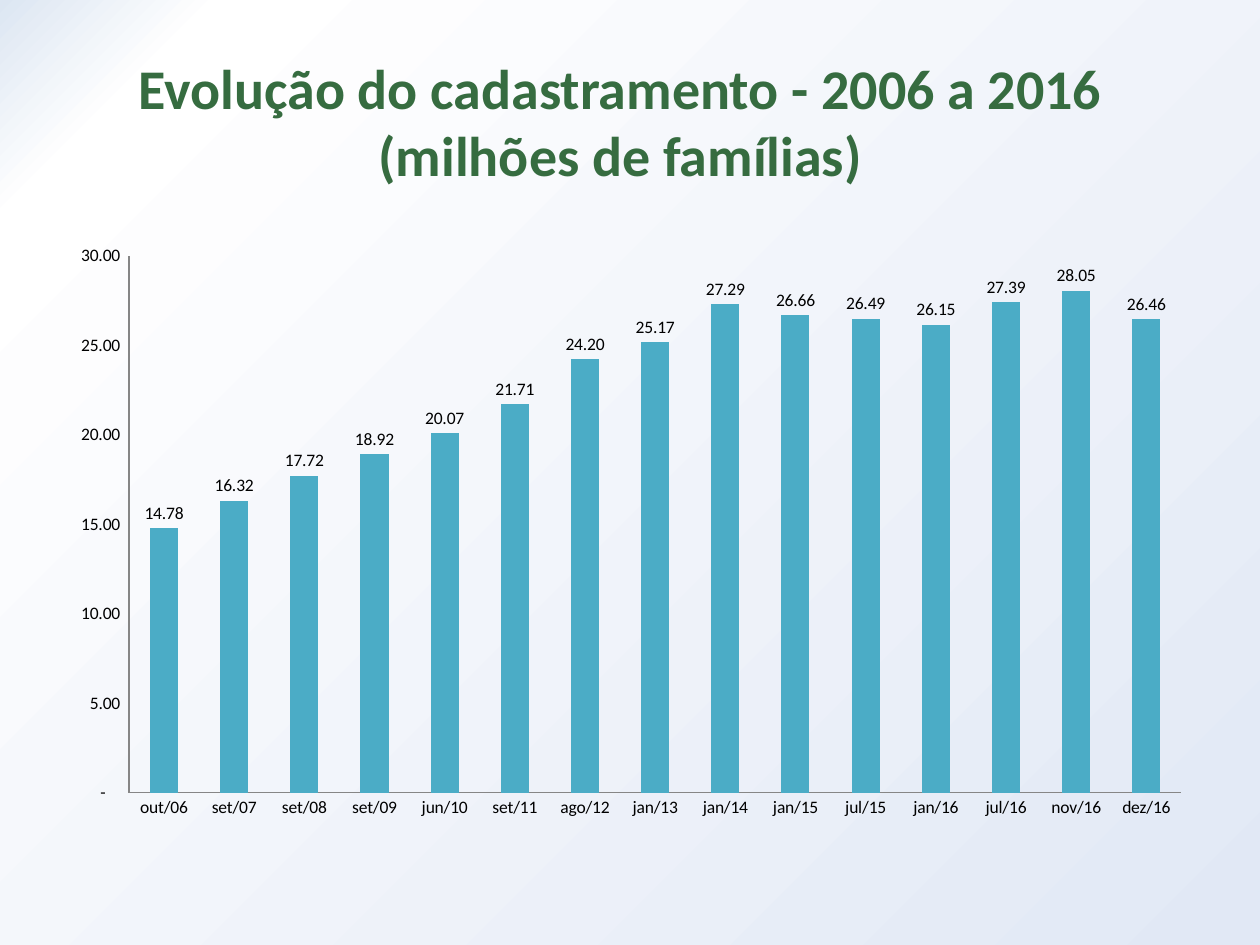
from lxml import etree
from pptx import Presentation
from pptx.chart.data import CategoryChartData
from pptx.dml.color import RGBColor
from pptx.enum.chart import XL_CHART_TYPE, XL_LABEL_POSITION, XL_TICK_MARK
from pptx.enum.text import MSO_ANCHOR, PP_ALIGN
from pptx.oxml.ns import qn
from pptx.util import Inches, Pt

COLUMN = XL_CHART_TYPE.COLUMN_CLUSTERED
OUTSIDE = XL_LABEL_POSITION.OUTSIDE_END
NO_TICK = XL_TICK_MARK.NONE
MIDDLE = MSO_ANCHOR.MIDDLE
CENTER = PP_ALIGN.CENTER

GREEN = RGBColor(0x36, 0x6C, 0x40)
TEAL = RGBColor(0x4B, 0xAC, 0xC6)
GRAY = RGBColor(0x86, 0x86, 0x86)
BLACK = RGBColor(0, 0, 0)
ICE = RGBColor(0xDC, 0xE6, 0xF2)
WHITE = RGBColor(0xFF, 0xFF, 0xFF)
MIST = RGBColor(0xE1, 0xE8, 0xF5)

FORMAT = '_-* #,##0.00_-;\\-* #,##0.00_-;_-* "-"??_'
FAMILIES = {
    "out/06": 14.78, "set/07": 16.32, "set/08": 17.72, "set/09": 18.92,
    "jun/10": 20.07, "set/11": 21.71, "ago/12": 24.20, "jan/13": 25.17,
    "jan/14": 27.29, "jan/15": 26.66, "jul/15": 26.49, "jan/16": 26.15,
    "jul/16": 27.39, "nov/16": 28.05, "dez/16": 26.46,
}


class Deck:
    """Holds the style and the current slide."""

    face = "Calibri"

    def __init__(self, pres):
        self.slide = pres.slides.add_slide(pres.slide_layouts[5])

    def font(self, font, size, color, bold=False):
        font.name, font.size, font.bold = self.face, Pt(size), bold
        font.color.rgb = color

    def backdrop(self, stops, angle):
        fill = self.slide.background.fill
        fill.gradient()
        fill.gradient_angle = -angle % 360
        group = next(self.slide.element.iter(qn("a:gsLst")))
        for stop in list(group):
            group.remove(stop)
        for place, color in stops:
            stop = etree.SubElement(group, qn("a:gs"), pos=str(place * 1000))
            etree.SubElement(stop, qn("a:srgbClr"), val=str(color))

    def title(self, text, left, top, width, height):
        shape = self.slide.shapes.title
        shape.left, shape.top = Inches(left), Inches(top)
        shape.width, shape.height = Inches(width), Inches(height)
        frame = shape.text_frame
        frame.text = text
        frame.word_wrap = True
        frame.vertical_anchor = MIDDLE
        para = frame.paragraphs[0]
        para.alignment = CENTER
        self.font(para.font, 32, GREEN, True)

    def axis(self, axis):
        axis.major_tick_mark = axis.minor_tick_mark = NO_TICK
        axis.has_major_gridlines = False
        axis.format.line.color.rgb = GRAY
        axis.format.line.width = Pt(0.75)

    def layout(self, chart, **parts):
        area = chart.plots[0]._element.getparent()
        layout = area.find(qn("c:layout"))
        if layout is None:
            layout = etree.Element(qn("c:layout"))
            area.insert(0, layout)
        manual = etree.SubElement(layout, qn("c:manualLayout"))
        modes = {"layoutTarget": "inner", "xMode": "edge", "yMode": "edge"}
        for name, value in {**modes, **parts}.items():
            etree.SubElement(manual, qn("c:" + name), val=str(value))

    def columns(self, values, left, top, width, height):
        data = CategoryChartData(number_format=FORMAT)
        data.categories = list(values)
        data.add_series("Series 1", list(values.values()))
        chart = self.slide.shapes.add_chart(
            COLUMN, Inches(left), Inches(top), Inches(width), Inches(height), data
        ).chart
        chart.has_legend = chart.has_title = False
        self.font(chart.font, 10, BLACK)
        self.axis(chart.category_axis)
        scale = chart.value_axis
        self.axis(scale)
        scale.minimum_scale, scale.maximum_scale, scale.major_unit = 0, 30, 5
        scale.tick_labels.number_format = FORMAT
        scale.tick_labels.number_format_is_linked = False
        plot = chart.plots[0]
        plot.gap_width = 150
        plot.vary_by_categories = False
        fill = plot.series[0].format.fill
        fill.solid()
        fill.fore_color.rgb = TEAL
        plot.has_data_labels = True
        labels = plot.data_labels
        labels.show_value = True
        labels.position = OUTSIDE
        labels.number_format = FORMAT
        labels.number_format_is_linked = False
        self.font(labels.font, 10, BLACK)
        self.layout(chart, x=0.065, y=0.036, w=0.915, h=0.903)


def main():
    pres = Presentation()
    pres.slide_width, pres.slide_height = Inches(10), Inches(7.5)
    deck = Deck(pres)
    deck.backdrop([(0, ICE), (10, WHITE), (100, MIST)], 45)
    deck.title("Evolução do cadastramento - 2006 a 2016 (milhões de famílias)",
               0.35, -0.17, 9.15, 2.26)
    deck.columns(FAMILIES, 0.43, 1.86, 9.13, 4.72)
    pres.save("out.pptx")


if __name__ == "__main__":
    main()
